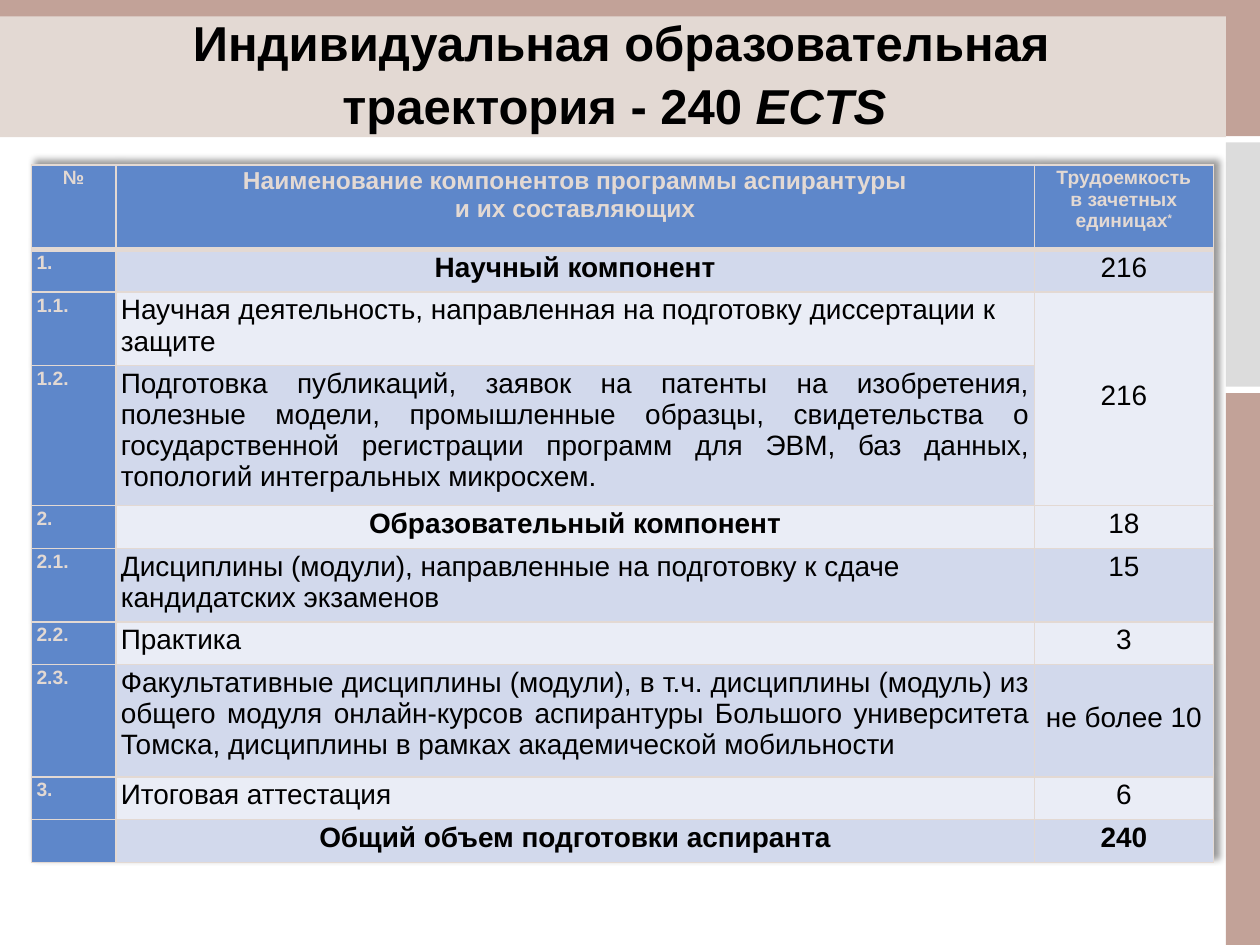
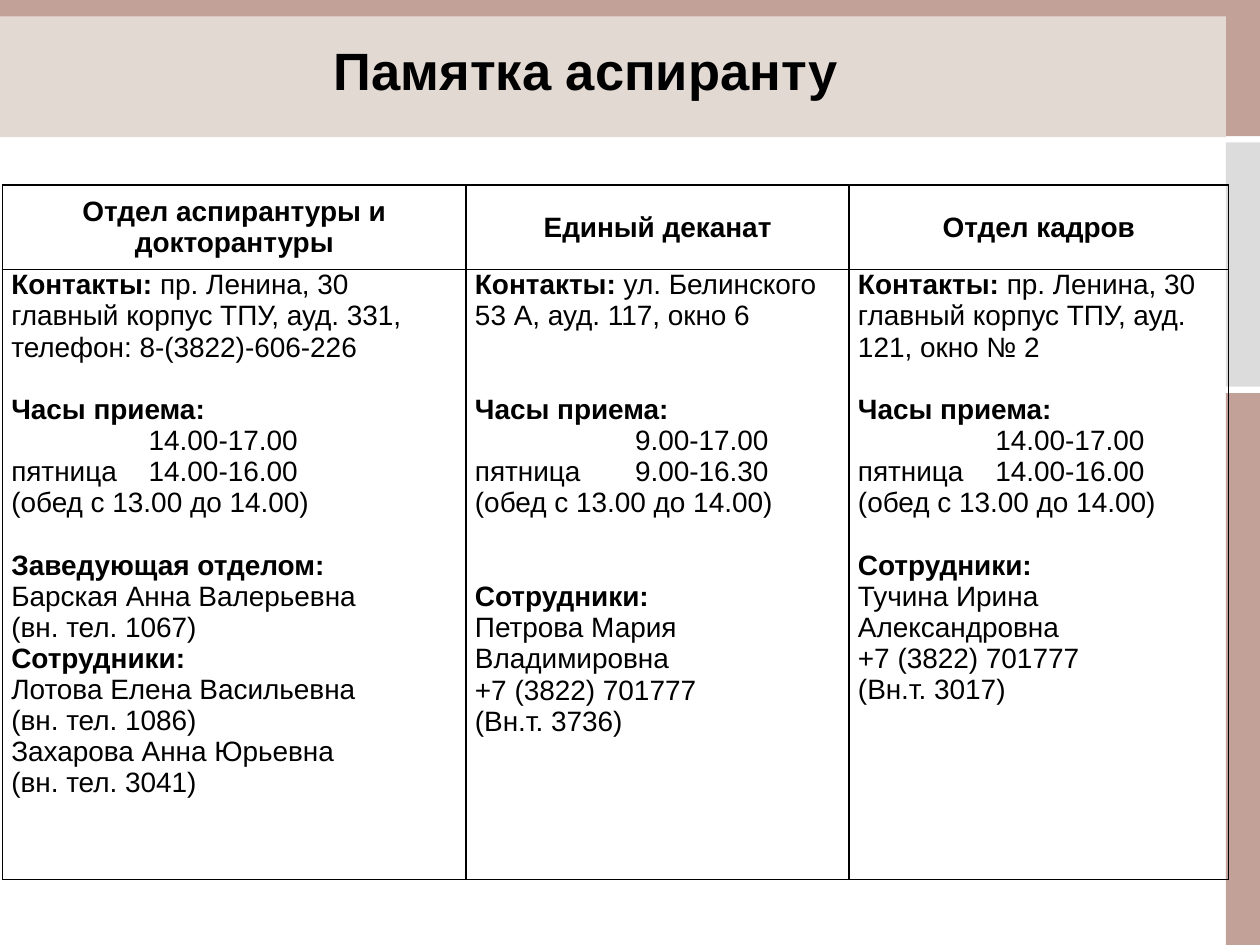
from lxml import etree
from pptx import Presentation
from pptx.dml.color import RGBColor
from pptx.enum.shapes import MSO_SHAPE
from pptx.enum.text import MSO_ANCHOR, MSO_AUTO_SIZE, PP_ALIGN
from pptx.oxml.ns import qn
from pptx.util import Inches, Pt

LEFT, CENTER, JUSTIFY = PP_ALIGN.LEFT, PP_ALIGN.CENTER, PP_ALIGN.JUSTIFY
TOP, MIDDLE = MSO_ANCHOR.TOP, MSO_ANCHOR.MIDDLE
RECTANGLE = MSO_SHAPE.RECTANGLE

BLACK = RGBColor(0x00, 0x00, 0x00)
ROSE = RGBColor(0xC2, 0xA2, 0x98)
SAND = RGBColor(0xE3, 0xD9, 0xD3)
GREY = RGBColor(0xDC, 0xDC, 0xDC)
BLUE = RGBColor(0x5E, 0x87, 0xCA)
BAND_DARK = RGBColor(0xD2, 0xD9, 0xEC)
BAND_LIGHT = RGBColor(0xEA, 0xED, 0xF6)

FONT = "Arial"
BODY_SIZE = 16
LINE_HEIGHT = 17.9  # points taken by one line of body text
WIDTH, HEIGHT = 10, 7.5
SIDE = 9.73  # left edge of the side strip

# left, top, width, height, colour
BANDS = [
    (SIDE, 1.13, WIDTH - SIDE, 1.94, GREY),
    (SIDE, 3.12, WIDTH - SIDE, HEIGHT - 3.12, ROSE),
    (0, 0, WIDTH, 1.08, ROSE),
    (0, 0.13, SIDE, 0.96, SAND),
]

PROGRAM_HEADER = [
    ["№"],
    ["Наименование компонентов программы аспирантуры", "и их составляющих"],
    ["Трудоемкость", "в зачетных единицах"],
]
HEADER_SIZES = [11, 14, 11]
HEADER_HEIGHT = 0.67
PROGRAM_COLUMNS = [0.67, 7.29, 1.42]
# number, component, credits, alignment, bold component, row height
PROGRAM = [
    ("1.", "Научный компонент", "216", CENTER, True, 0.34),
    ("1.1.", "Научная деятельность, направленная на подготовку диссертации к защите",
     "216", LEFT, False, 0.57),
    ("1.2.", "Подготовка публикаций, заявок на патенты на изобретения, полезные модели, "
     "промышленные образцы, свидетельства о государственной регистрации программ для ЭВМ, "
     "баз данных, топологий интегральных микросхем.", "", JUSTIFY, False, 1.11),
    ("2.", "Образовательный компонент", "18", CENTER, True, 0.34),
    ("2.1.", "Дисциплины (модули), направленные на подготовку к сдаче кандидатских экзаменов",
     "15", LEFT, False, 0.57),
    ("2.2.", "Практика", "3", JUSTIFY, False, 0.34),
    ("2.3.", "Факультативные дисциплины (модули), в т.ч. дисциплины (модуль) из общего модуля "
     "онлайн-курсов аспирантуры Большого университета Томска, дисциплины в рамках "
     "академической мобильности", "не более 10", JUSTIFY, False, 0.89),
    ("3.", "Итоговая аттестация", "6", JUSTIFY, False, 0.34),
    ("", "Общий объем подготовки аспиранта", "240", CENTER, True, 0.34),
]
SHARED_CREDITS = (2, 3)  # table rows whose credits are merged
CENTERED_CREDITS = {"не более 10"}


def reception(weekdays, friday, gap):
    return [
        ("Часы приема:", "", gap),
        ("", f"\t{weekdays}", 0),
        ("", f"пятница\t{friday}", 0),
        ("", "(обед с 13.00 до 14.00)", 0),
    ]


def people(heading, lines, gap):
    return [(heading, "", gap)] + [("", line, 0) for line in lines]


# Each line: bold label, plain text, blank lines above
OFFICES = [
    {"name": "Отдел аспирантуры и докторантуры", "width": 3.68, "tab": 1.09, "lines": [
        ("Контакты: ", "пр. Ленина, 30 главный корпус ТПУ, ауд. 331,", 0),
        ("", "телефон: 8-(3822)-606-226", 0),
        *reception("14.00-17.00", "14.00-16.00", 1),
        *people("Заведующая отделом:", ["Барская Анна Валерьевна", "(вн. тел. 1067)"], 1),
        *people("Сотрудники:", ["Лотова Елена Васильевна", "(вн. тел. 1086)",
                                "Захарова Анна Юрьевна", "(вн. тел. 3041)"], 0),
    ]},
    {"name": "Единый деканат", "width": 3.04, "tab": 1.27, "lines": [
        ("Контакты: ", "ул. Белинского 53 А, ауд. 117, окно 6", 0),
        *reception("9.00-17.00", "9.00-16.30", 2),
        *people("Сотрудники:", ["Петрова Мария Владимировна", "+7 (3822) 701777",
                                "(Вн.т. 3736)"], 2),
    ]},
    {"name": "Отдел кадров", "width": 3.01, "tab": 1.09, "lines": [
        ("Контакты: ", "пр. Ленина, 30 главный корпус ТПУ, ауд. 121, окно № 2", 0),
        *reception("14.00-17.00", "14.00-16.00", 1),
        *people("Сотрудники:", ["Тучина Ирина Александровна", "+7 (3822) 701777",
                                "(Вн.т. 3017)"], 1),
    ]},
]
OFFICE_ROWS = [0.67, 4.84]


def style(paragraph, size, color=BLACK, bold=False, align=LEFT):
    paragraph.alignment = align
    font = paragraph.font
    font.name, font.size, font.bold = FONT, Pt(size), bold
    font.color.rgb = color


def add_page(deck, title_spans, size, left, height):
    """Add a slide with the shared bands and a title made of (text, italic) spans."""
    page = deck.slides.add_slide(deck.slide_layouts[5])
    for *place, color in BANDS:
        band = page.shapes.add_shape(RECTANGLE, *map(Inches, place))
        band.shadow.inherit = False
        band.fill.solid()
        band.fill.fore_color.rgb = color
        band.line.fill.background()
    title = page.shapes.title
    title.element.getparent().append(title.element)  # in front of the bands
    title.left, title.top = Inches(left), Inches(0.13)
    title.width, title.height = Inches(9), Inches(height)
    frame = title.text_frame
    frame.word_wrap, frame.auto_size = True, MSO_AUTO_SIZE.NONE
    frame.vertical_anchor = MIDDLE
    para = frame.paragraphs[0]
    style(para, size, bold=True, align=CENTER)
    para.line_spacing = 1.08
    for text, italic in title_spans:
        span = para.add_run()
        span.text = text
        span.font.italic = italic
    return page


def add_grid(page, left, top, widths, heights):
    frame = page.shapes.add_table(len(heights), len(widths), Inches(left), Inches(top),
                                  Inches(sum(widths)), Inches(sum(heights)))
    table = frame.table
    table.first_row = table.horz_banding = False
    for column, width in zip(table.columns, widths):
        column.width = Inches(width)
    for row, height in zip(table.rows, heights):
        row.height = Inches(height)
    return table


def format_cell(cell, margins, border, fill=None, anchor=TOP, top=1, bottom=1):
    """Margins are left, top, right, bottom; top and bottom are border widths in points."""
    (cell.margin_left, cell.margin_top,
     cell.margin_right, cell.margin_bottom) = map(Inches, margins)
    cell.vertical_anchor = anchor
    if fill is None:
        cell.fill.background()
    else:
        cell.fill.solid()
        cell.fill.fore_color.rgb = fill
    properties = cell._tc.get_or_add_tcPr()
    edges = [("lnL", 1), ("lnR", 1), ("lnT", top), ("lnB", bottom)]
    for index, (edge, width) in enumerate(edges):
        line = etree.Element(qn(f"a:{edge}"), w=str(Pt(width)))
        solid = etree.SubElement(line, qn("a:solidFill"))
        etree.SubElement(solid, qn("a:srgbClr"), val=str(border))
        properties.insert(index, line)


def write(cell, lines, *look):
    frame = cell.text_frame
    frame.text = "\n".join(lines)
    for para in frame.paragraphs:
        style(para, *look)


def add_table_shadow(table):
    effects = etree.Element(qn("a:effectLst"))
    shadow = etree.SubElement(effects, qn("a:outerShdw"), blurRad=str(Pt(4)), dist=str(Pt(3)),
                              dir="18900000", algn="bl", rotWithShape="0")
    color = etree.SubElement(shadow, qn("a:prstClr"), val="black")
    etree.SubElement(color, qn("a:alpha"), val="40000")
    table._tbl.tblPr.insert(0, effects)


def add_program(deck):
    page = add_page(deck, [("Индивидуальная образовательная траектория - 240 ", False),
                           ("ECTS ", True)], 28, 0.43, 0.87)
    heights = [HEADER_HEIGHT] + [row[-1] for row in PROGRAM]
    table = add_grid(page, 0.25, 1.31, PROGRAM_COLUMNS, heights)
    add_table_shadow(table)
    margins = (0.04, 0.02, 0.04, 0.07)

    for column, (lines, size) in enumerate(zip(PROGRAM_HEADER, HEADER_SIZES)):
        cell = table.cell(0, column)
        write(cell, lines, size, SAND, True, CENTER)
        format_cell(cell, margins, SAND, BLUE, bottom=3)
    footnote = table.cell(0, 2).text_frame.paragraphs[-1].add_run()
    footnote.text = "*"
    footnote._r.get_or_add_rPr().set("baseline", "30000")

    first, last = SHARED_CREDITS
    for index, (number, component, credits, align, bold, _) in enumerate(PROGRAM, start=1):
        band = BAND_DARK if index % 2 else BAND_LIGHT
        total = index == len(PROGRAM)
        middle = index == first or credits in CENTERED_CREDITS
        parts = [
            (number, (11, SAND, True, LEFT), BLUE, TOP),
            (component, (BODY_SIZE, BLACK, bold, align), band, TOP),
            (credits, (BODY_SIZE, BLACK, total, CENTER), band, MIDDLE if middle else TOP),
        ]
        for column, (text, look, fill, anchor) in enumerate(parts):
            cell = table.cell(index, column)
            write(cell, [text], *look)
            format_cell(cell, margins, SAND, fill, anchor, top=3 if index == 1 else 1)
    table.cell(first, 2).merge(table.cell(last, 2))


def add_office_line(para, label, text, gap, tab):
    if "\t" in text:
        tabs = etree.SubElement(para._p.get_or_add_pPr(), qn("a:tabLst"))
        etree.SubElement(tabs, qn("a:tab"), pos=str(Inches(tab)), algn="l")
    style(para, BODY_SIZE)
    if gap:
        para.space_before = Pt(gap * LINE_HEIGHT)
    for content, bold in ((label, True), (text, False)):
        if content:
            span = para.add_run()
            span.text = content
            span.font.bold = bold


def add_contacts(deck):
    page = add_page(deck, [("Памятка аспиранту", False)], 30, 0.15, 0.8)
    table = add_grid(page, 0.02, 1.47, [office["width"] for office in OFFICES], OFFICE_ROWS)
    margins = (0.07, 0, 0.07, 0)
    for column, office in enumerate(OFFICES):
        heading, body = table.cell(0, column), table.cell(1, column)
        write(heading, [office["name"]], BODY_SIZE, BLACK, True, CENTER)
        format_cell(heading, margins, BLACK, anchor=MIDDLE)
        format_cell(body, margins, BLACK)
        frame = body.text_frame
        for index, line in enumerate(office["lines"]):
            para = frame.add_paragraph() if index else frame.paragraphs[0]
            add_office_line(para, *line, office["tab"])


def main():
    deck = Presentation()
    deck.slide_width, deck.slide_height = Inches(WIDTH), Inches(HEIGHT)
    add_program(deck)
    add_contacts(deck)
    deck.save("out.pptx")


if __name__ == "__main__":
    main()
